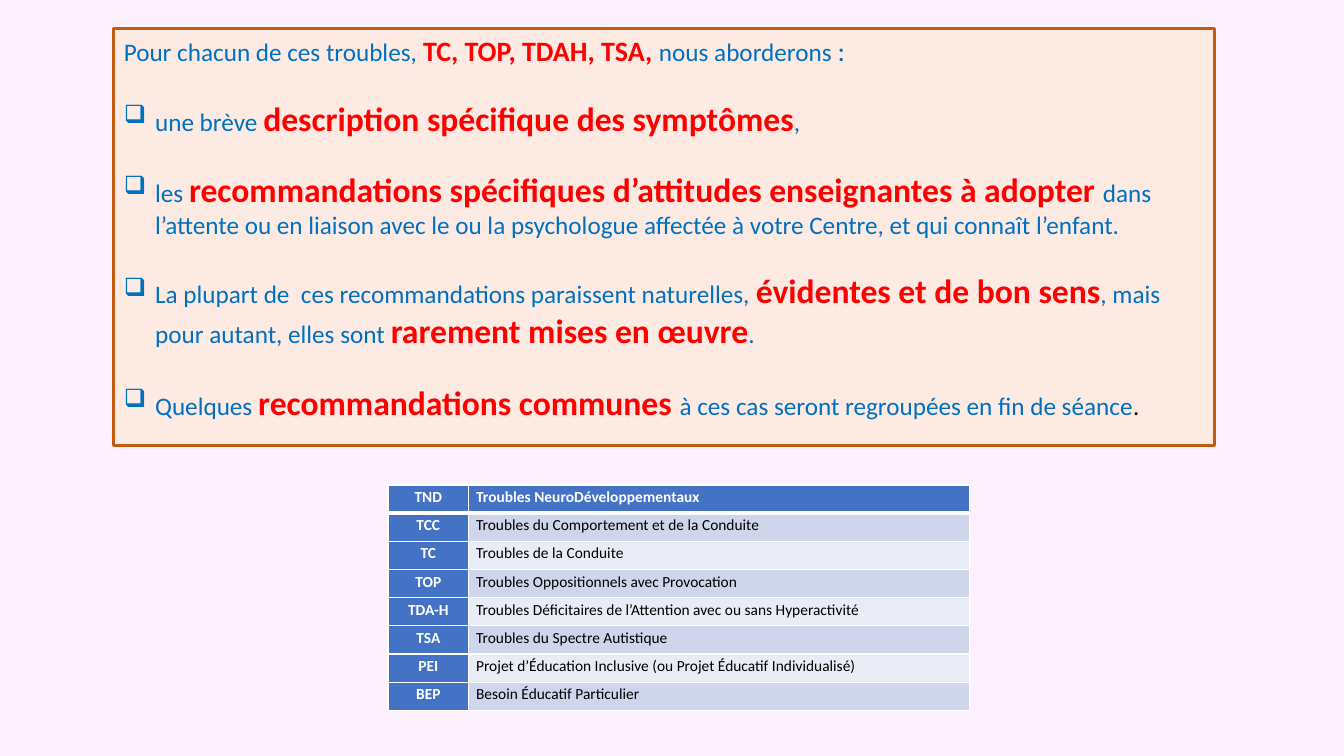
from dataclasses import dataclass

import lxml.etree
import pptx
import pptx.dml.color
import pptx.enum.shapes
import pptx.enum.text
import pptx.oxml.ns
import pptx.util

Cm = pptx.util.Cm
Pt = pptx.util.Pt
qn = pptx.oxml.ns.qn

FONT = "Calibri"
BLUE, RED, BLACK, WHITE = "0070C0", "FF0000", "000000", "FFFFFF"
HEADER, BANDS = "4472C4", ("E9EBF5", "CFD5EA")


@dataclass(frozen=True)
class Span:
    text: str
    size: float = 18
    color: str = BLUE
    bold: bool = False


@dataclass(frozen=True)
class Acronym:
    short: str
    meaning: str


def strong(text: str, size: float = 24) -> Span:
    return Span(text, size, RED, True)


INTRODUCTION = [
    Span("Pour chacun de ces troubles, "),
    strong("TC, TOP, TDAH, TSA, ", 20),
    Span("nous aborderons "),
    Span(":", 20),
]
TOPICS = [
    [Span("une brève "), strong("description spécifique des symptômes"), Span(",")],
    [
        Span("les "),
        strong("recommandations spécifiques d’attitudes enseignantes à adopter "),
        Span("dans l’attente ou en liaison avec le ou la psychologue affectée "
             "à votre Centre, et qui connaît l’enfant."),
    ],
    [
        Span("La plupart de  ces recommandations paraissent naturelles, "),
        strong("évidentes et de bon sens"),
        Span(", mais pour autant, elles sont "),
        strong("rarement mises en œuvre"),
        Span("."),
    ],
    [
        Span("Quelques "),
        strong("recommandations communes "),
        Span("à ces cas seront regroupées en fin de séance"),
        Span(".", color=BLACK),
    ],
]
ACRONYMS = [
    Acronym("TND", "Troubles NeuroDéveloppementaux"),
    Acronym("TCC", "Troubles du Comportement et de la Conduite"),
    Acronym("TC", "Troubles de la Conduite"),
    Acronym("TOP", "Troubles Oppositionnels avec Provocation"),
    Acronym("TDA-H", "Troubles Déficitaires de l’Attention avec ou sans Hyperactivité"),
    Acronym("TSA", "Troubles du Spectre Autistique"),
    Acronym("PEI", "Projet d’Éducation Inclusive (ou Projet Éducatif Individualisé)"),
    Acronym("BEP", "Besoin Éducatif Particulier"),
]


def rgb(color: str) -> pptx.dml.color.RGBColor:
    return pptx.dml.color.RGBColor.from_string(color)


def paint(fill, color: str) -> None:
    fill.solid()
    fill.fore_color.rgb = rgb(color)


def add_spans(paragraph, spans: list[Span]) -> None:
    for span in spans:
        run = paragraph.add_run()
        run.text = span.text
        run.font.name = FONT
        run.font.size = Pt(span.size)
        run.font.bold = span.bold
        run.font.color.rgb = rgb(span.color)


def add_bullet(paragraph) -> None:
    properties = paragraph._p.get_or_add_pPr()
    properties.set("marL", str(Cm(0.79)))
    properties.set("indent", str(-Cm(0.79)))
    bullet = lxml.etree.SubElement(properties, qn("a:buChar"))
    bullet.set("char", "❑")


def add_program(slide) -> None:
    shape = slide.shapes.add_shape(
        pptx.enum.shapes.MSO_SHAPE.RECTANGLE, Cm(2.87), Cm(0.71), Cm(27.74), Cm(10.52)
    )
    shape.shadow.inherit = False
    paint(shape.fill, "FFD966")
    fill_color = shape._element.spPr.find(qn("a:solidFill")).find(qn("a:srgbClr"))
    lxml.etree.SubElement(fill_color, qn("a:alpha")).set("val", "18000")
    shape.line.color.rgb = rgb("C55A11")
    shape.line.width = Pt(2)
    frame = shape.text_frame
    frame.word_wrap = True
    frame.vertical_anchor = pptx.enum.text.MSO_ANCHOR.TOP
    introduction = frame.paragraphs[0]
    introduction.alignment = pptx.enum.text.PP_ALIGN.LEFT
    add_spans(introduction, INTRODUCTION)
    for topic in TOPICS:
        paragraph = frame.add_paragraph()
        paragraph.alignment = pptx.enum.text.PP_ALIGN.LEFT
        paragraph.space_before = Pt(22)
        add_bullet(paragraph)
        add_spans(paragraph, topic)


def set_borders(cell, top: float, bottom: float) -> None:
    properties = cell._tc.get_or_add_tcPr()
    widths = {"a:lnL": 1, "a:lnR": 1, "a:lnT": top, "a:lnB": bottom}
    for position, (tag, width) in enumerate(widths.items()):
        line = lxml.etree.Element(qn(tag))
        line.set("w", str(Pt(width)))
        fill = lxml.etree.SubElement(line, qn("a:solidFill"))
        lxml.etree.SubElement(fill, qn("a:srgbClr")).set("val", WHITE)
        properties.insert(position, line)


def add_glossary(slide) -> None:
    row_height = Cm(0.71)
    widths = (Cm(2.03), Cm(12.62))
    table = slide.shapes.add_table(
        len(ACRONYMS), 2, Cm(9.78), Cm(12.22), sum(widths), row_height * len(ACRONYMS)
    ).table
    for column, width in zip(table.columns, widths):
        column.width = width
    for row_index, acronym in enumerate(ACRONYMS):
        table.rows[row_index].height = row_height
        for column_index, text in enumerate((acronym.short, acronym.meaning)):
            heading = row_index == 0 or column_index == 0
            cell = table.cell(row_index, column_index)
            cell.margin_left = cell.margin_right = Cm(0.19)
            cell.margin_top = cell.margin_bottom = 0
            paint(cell.fill, HEADER if heading else BANDS[row_index % 2])
            set_borders(cell, 3 if row_index == 1 else 1, 3 if row_index == 0 else 1)
            paragraph = cell.text_frame.paragraphs[0]
            if column_index == 0:
                paragraph.alignment = pptx.enum.text.PP_ALIGN.CENTER
            paragraph.line_spacing = 1.15
            paragraph.space_after = Pt(10)
            add_spans(paragraph, [Span(text, 11, WHITE if heading else BLACK, heading)])


def main() -> None:
    presentation = pptx.Presentation()
    presentation.slide_width = Cm(33.87)
    presentation.slide_height = Cm(19.05)
    slide = presentation.slides.add_slide(presentation.slide_layouts[6])
    paint(slide.background.fill, "FDF0FF")
    add_program(slide)
    add_glossary(slide)
    presentation.save("out.pptx")


if __name__ == "__main__":
    main()
